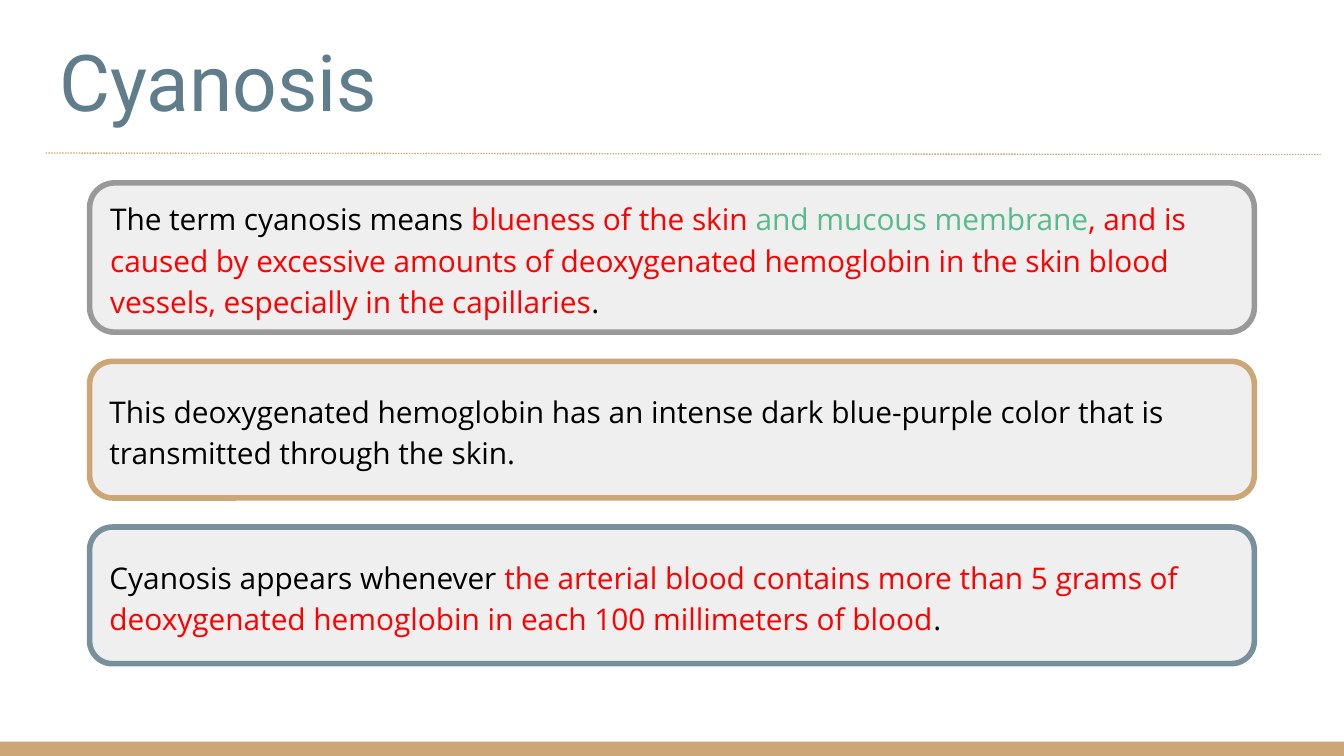
import pptx
import pptx.util
import pptx.dml.color
import pptx.enum.dml
import pptx.enum.shapes
import pptx.enum.text
import pptx.oxml
import pptx.oxml.ns

Pt = pptx.util.Pt
SHAPES = pptx.enum.shapes.MSO_SHAPE
ANCHOR = pptx.enum.text.MSO_ANCHOR
LEFT = pptx.enum.text.PP_ALIGN.LEFT
INK, RED, GREEN, TAN = "000000", "FF0000", "57BB8A", "CCA677"


def rgb(value):
    return pptx.dml.color.RGBColor.from_string(value)


def set_frame(frame, anchor):
    settings = {"word_wrap": True, "vertical_anchor": anchor,
                "auto_size": pptx.enum.text.MSO_AUTO_SIZE.NONE}
    settings.update({f"margin_{side}": Pt(7.2)
                     for side in ("left", "right", "top", "bottom")})
    for key, value in settings.items():
        setattr(frame, key, value)


deck = pptx.Presentation()
deck.slide_width, deck.slide_height = Pt(720), Pt(405)
slide = deck.slides.add_slide(deck.slide_layouts[5])

# Bottom band
band = slide.shapes.add_shape(SHAPES.RECTANGLE, Pt(0), Pt(397.3), Pt(720), Pt(7.7))
band.shadow.inherit = False
band.fill.solid()
band.fill.fore_color.rgb = rgb(TAN)
band.line.fill.background()

# Title
title = slide.shapes.title
title_place = {"left": 24.5, "top": 10, "width": 671, "height": 65.5}
for key, value in title_place.items():
    setattr(title, key, Pt(value))
set_frame(title.text_frame, ANCHOR.BOTTOM)
heading = title.text_frame.paragraphs[0]
heading.text = "Cyanosis"
heading.alignment = LEFT
for key, value in {"name": "Roboto", "size": Pt(42)}.items():
    setattr(heading.font, key, value)
heading.font.color.rgb = rgb("607D8B")

# Dotted rule under the title
rule = slide.shapes.add_connector(pptx.enum.shapes.MSO_CONNECTOR.STRAIGHT,
                                  Pt(24.5), Pt(82), Pt(707.5), Pt(82.8))
rule.line.color.rgb = rgb(TAN)
rule.line.width = Pt(0.75)
rule.line.dash_style = pptx.enum.dml.MSO_LINE.ROUND_DOT
rule_properties = rule._element.spPr
rule_properties.append(
    rule_properties.makeelement(pptx.oxml.ns.qn("a:effectLst"), {}))

# Statement cards: height, border colour, coloured text pieces
cards = [
    (80, "999999", [
        ("The term cyanosis means ", INK),
        ("blueness of the skin ", RED),
        ("and mucous membrane", GREEN),
        (", and is caused by excessive amounts of deoxygenated hemoglobin "
         "in the skin blood vessels, especially in the capillaries", RED),
        (".", INK)]),
    (73.2, TAN, [
        ("This deoxygenated hemoglobin has an intense dark blue-purple color "
         "that is transmitted through the skin.", INK)]),
    (73.2, "78909C", [
        ("Cyanosis appears whenever ", INK),
        ("the arterial blood contains more than 5 grams of deoxygenated "
         "hemoglobin in each 100 millimeters of blood", RED),
        (".", INK)]),
]
card_top, card_gap = 98, 15.6
for height, border, pieces in cards:
    card = slide.shapes.add_shape(SHAPES.ROUNDED_RECTANGLE, Pt(48), Pt(card_top),
                                  Pt(624), Pt(height))
    card.adjustments[0] = 0.167
    card.shadow.inherit = False
    card.fill.solid()
    card.fill.fore_color.rgb = rgb("EFEFEF")
    card.line.color.rgb = rgb(border)
    card.line.width = Pt(3)
    set_frame(card.text_frame, ANCHOR.MIDDLE)
    statement = card.text_frame.paragraphs[0]
    statement.alignment = LEFT
    statement.line_spacing = 1.15
    for words, colour in pieces:
        piece = statement.add_run()
        piece.text = words
        for key, value in {"name": "Open Sans", "size": Pt(16)}.items():
            setattr(piece.font, key, value)
        piece.font.color.rgb = rgb(colour)
    card_top += height + card_gap

deck.save("out.pptx")
